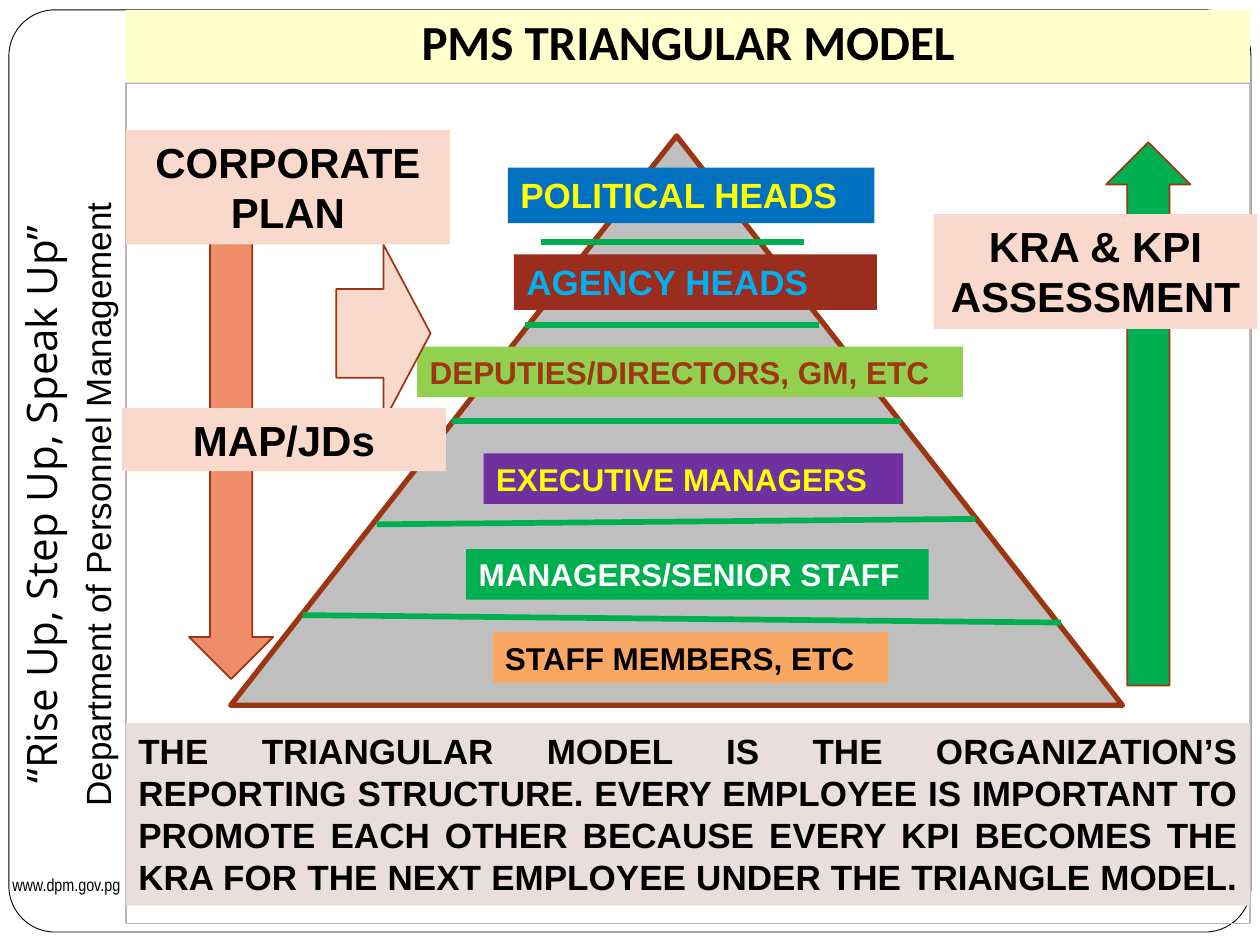
from lxml import etree
from pptx import Presentation
from pptx.dml.color import RGBColor
from pptx.enum.shapes import MSO_CONNECTOR, MSO_SHAPE
from pptx.enum.text import MSO_ANCHOR, PP_ALIGN
from pptx.oxml.ns import qn
from pptx.util import Cm, Pt

RECTANGLE = MSO_SHAPE.RECTANGLE
ROUNDED = MSO_SHAPE.ROUNDED_RECTANGLE
TRIANGLE = MSO_SHAPE.ISOSCELES_TRIANGLE
DOWN_ARROW, UP_ARROW = MSO_SHAPE.DOWN_ARROW, MSO_SHAPE.UP_ARROW
RIGHT_ARROW = MSO_SHAPE.RIGHT_ARROW
STRAIGHT = MSO_CONNECTOR.STRAIGHT
LEFT, CENTER, JUSTIFY = PP_ALIGN.LEFT, PP_ALIGN.CENTER, PP_ALIGN.JUSTIFY
TOP, BOTTOM = MSO_ANCHOR.TOP, MSO_ANCHOR.BOTTOM

BLACK = RGBColor(0x00, 0x00, 0x00)
WHITE = RGBColor(0xFF, 0xFF, 0xFF)
GREY = RGBColor(0xBF, 0xBF, 0xBF)
FRAME_GREY = RGBColor(0xBD, 0xB5, 0xB6)
CREAM = RGBColor(0xFF, 0xFF, 0xCC)
MAUVE = RGBColor(0xE8, 0xDE, 0xDE)
PEACH = RGBColor(0xFA, 0xD9, 0xCD)
SALMON = RGBColor(0xEF, 0x8C, 0x6A)
RUST = RGBColor(0x9C, 0x35, 0x11)
BROWN = RGBColor(0x9E, 0x36, 0x11)
BRICK = RGBColor(0x9B, 0x2D, 0x1F)
GREEN = RGBColor(0x00, 0xB0, 0x50)
LIME = RGBColor(0x92, 0xD0, 0x50)
BLUE = RGBColor(0x00, 0x70, 0xC0)
SKY = RGBColor(0x00, 0xB0, 0xF0)
PURPLE = RGBColor(0x70, 0x30, 0xA0)
ORANGE = RGBColor(0xF9, 0xA7, 0x63)
YELLOW = RGBColor(0xFF, 0xFF, 0x00)


class SlideBuilder:
    """Draws on one slide; boxes are (left, top, width, height) in cm."""

    font = "Arial"

    def __init__(self, slide):
        self.slide = slide

    def shape(self, kind, box, fill=None, line=None, weight=1):
        shape = self.slide.shapes.add_shape(kind, *map(Cm, box))
        shape.shadow.inherit = False
        if fill is None:
            shape.fill.background()
        else:
            shape.fill.solid()
            shape.fill.fore_color.rgb = fill
        if line is None:
            shape.line.fill.background()
        else:
            shape.line.color.rgb = line
            shape.line.width = Pt(weight)
        return shape

    def divider(self, x1, y1, x2, y2):
        divider = self.slide.shapes.add_connector(STRAIGHT, *map(Cm, (x1, y1, x2, y2)))
        divider.line.color.rgb = GREEN
        divider.line.width = Pt(3.25)
        etree.SubElement(divider._element.spPr, qn("a:effectLst"))

    def text(self, box, lines, align=LEFT, fill=None, color=BLACK, bold=True, anchor=TOP):
        """Each line is (wording, size) or (wording, size, font)."""
        text_box = self.slide.shapes.add_textbox(*map(Cm, box))
        if fill is not None:
            text_box.fill.solid()
            text_box.fill.fore_color.rgb = fill
        frame = text_box.text_frame
        frame.word_wrap = True
        frame.vertical_anchor = anchor
        frame.text = "\n".join(line[0] for line in lines)
        for paragraph, (_, size, *font) in zip(frame.paragraphs, lines):
            paragraph.alignment = align
            for run in paragraph.runs:
                run.font.name = font[0] if font else self.font
                run.font.size = Pt(size)
                run.font.bold = bold
                run.font.color.rgb = color
        return text_box


def main():
    prs = Presentation()
    prs.slide_width, prs.slide_height = Cm(25.4), Cm(19.05)
    builder = SlideBuilder(prs.slides.add_slide(prs.slide_layouts[6]))

    # Page border and side motto
    border = builder.shape(ROUNDED, (0.18, 0.2, 25.04, 18.59), WHITE, BLACK, 0.5)
    border.adjustments[0] = 0.05
    motto = builder.text(
        (-6.68, 8.99, 16.08, 2.36),
        [("“Rise Up, Step Up, Speak Up”", 24, "Open Sans"),
         ("Department of Personnel Management", 20)],
        CENTER, bold=False)
    motto.rotation = 270
    motto.text_frame.paragraphs[1].space_before = Pt(6)
    builder.text((0, 17.5, 2.97, 0.71), [("www.dpm.gov.pg", 10, "Arial Narrow")], bold=False)

    # Content frame, pyramid and its dividers
    builder.shape(RECTANGLE, (2.54, 1.68, 22.66, 16.94), line=FRAME_GREY)
    builder.shape(TRIANGLE, (4.65, 2.74, 17.98, 11.48), GREY, RUST, 3)
    for ends in [
        (10.9, 4.88, 16.21, 4.88),
        (10.59, 6.55, 16.51, 6.55),
        (9.12, 8.48, 18.16, 8.48),
        (7.59, 10.57, 19.66, 10.46),
        (6.1, 12.4, 21.39, 12.55),
    ]:
        builder.divider(*ends)

    # Title and closing statement
    title = builder.text((2.54, 0.2, 22.66, 1.47), [("PMS TRIANGULAR MODEL", 28, "Calibri")],
                         CENTER, CREAM, anchor=BOTTOM)
    title.text_frame.margin_bottom = Cm(0.25)
    builder.text(
        (2.54, 14.58, 22.66, 3.68),
        [("THE TRIANGULAR MODEL IS THE ORGANIZATION’S REPORTING STRUCTURE. "
          "EVERY EMPLOYEE IS IMPORTANT TO PROMOTE EACH OTHER BECAUSE EVERY KPI "
          "BECOMES THE KRA FOR THE NEXT EMPLOYEE UNDER THE TRIANGLE MODEL. ", 20)],
        JUSTIFY, MAUVE)

    # Levels of the pyramid, top to bottom
    for wording, size, box, fill, color in [
        ("POLITICAL HEADS", 20, (10.24, 3.38, 7.39, 1.12), BLUE, YELLOW),
        ("AGENCY HEADS", 20, (10.36, 5.13, 7.32, 1.12), BRICK, SKY),
        ("DEPUTIES/DIRECTORS, GM, ETC", 18, (8.41, 6.99, 11, 1.02), LIME, BROWN),
        ("EXECUTIVE MANAGERS", 18, (9.75, 9.14, 8.46, 1.02), PURPLE, YELLOW),
        ("MANAGERS/SENIOR STAFF", 18, (9.4, 11.07, 9.32, 1.02), GREEN, WHITE),
        ("STAFF MEMBERS, ETC", 18, (9.93, 12.75, 7.98, 1.02), ORANGE, BLACK),
    ]:
        builder.text(box, [(wording, size)], fill=fill, color=color)

    # Flow arrows
    for kind, box, fill in [
        (DOWN_ARROW, (3.81, 2.74, 1.7, 10.95), SALMON),
        (UP_ARROW, (22.3, 2.87, 1.7, 10.95), GREEN),
        (RIGHT_ARROW, (6.78, 4.93, 1.9, 3.58), PEACH),
    ]:
        builder.shape(kind, box, fill, RUST)

    # Labels over the arrows
    for wording, left, top, height in [
        ("CORPORATE PLAN", 2.54, 2.62, 2.31),
        ("KRA & KPI ASSESSMENT", 18.82, 4.32, 2.31),
        ("MAP/JDs", 2.46, 8.23, 1.27),
    ]:
        builder.text((left, top, 6.53, height), [(wording, 24)], CENTER, PEACH)

    prs.save("out.pptx")


if __name__ == "__main__":
    main()
